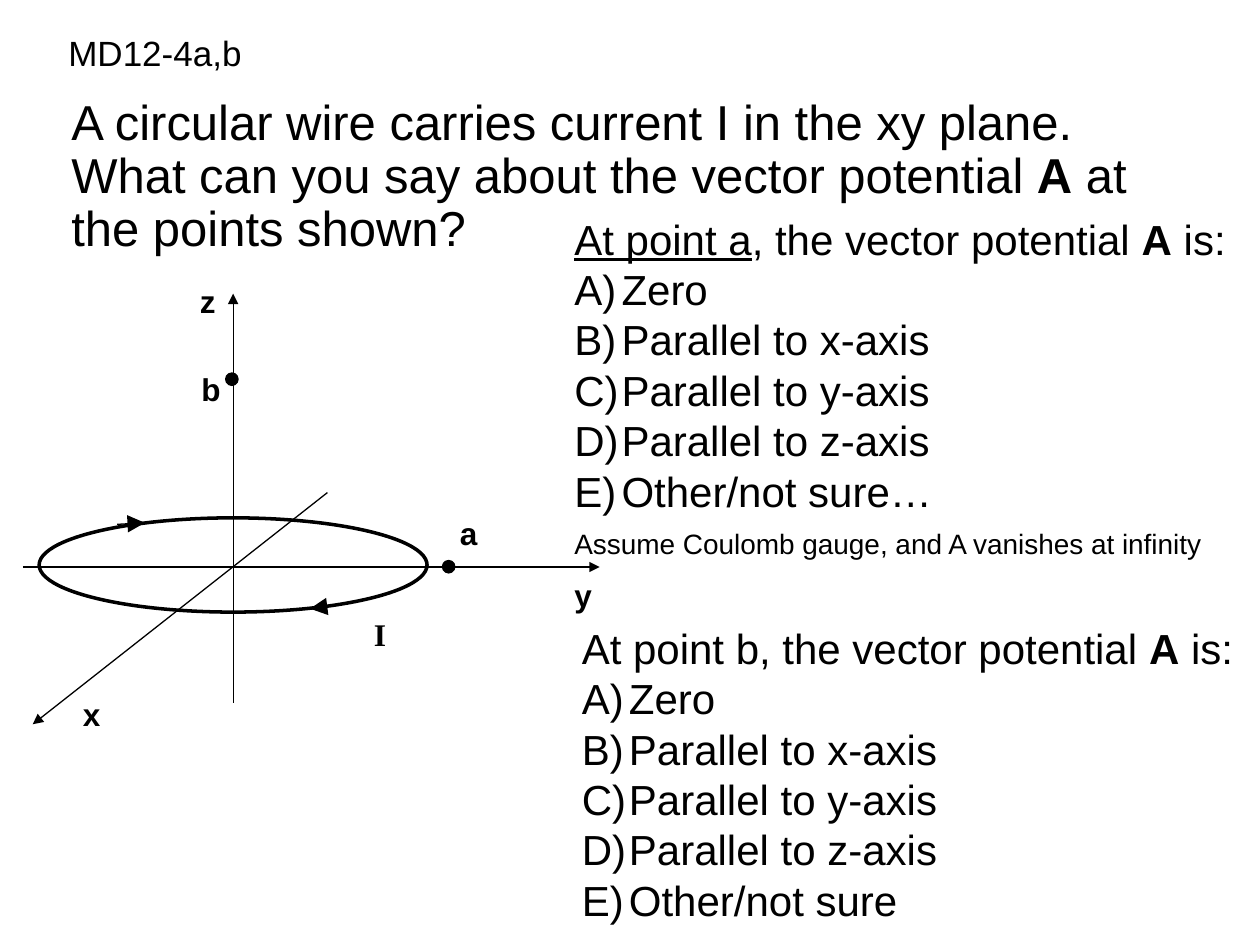
from lxml import etree
from pptx import Presentation
from pptx import util as u
from pptx.dml.color import RGBColor
from pptx.enum import shapes, text
from pptx.oxml import ns

BLACK = RGBColor(0x00, 0x00, 0x00)
HANG = u.Cm(0.95)
DIRECTIONS = ["Zero", "Parallel to x-axis", "Parallel to y-axis", "Parallel to z-axis"]


def add_runs(paragraph, runs, size, font="Arial"):
    """Append (words, style) runs; style holds any of 'b' and 'u'."""
    for words, style in runs:
        run = paragraph.add_run()
        run.text = words
        run.font.name = font
        run.font.size = u.Pt(size)
        run.font.color.rgb = BLACK
        run.font.bold = "b" in style
        run.font.underline = "u" in style


def add_text(parent, box, runs, size, font="Arial", wrap=True):
    """Add a text box with one paragraph and return its frame."""
    frame = parent.add_textbox(*map(u.Cm, box)).text_frame
    frame.word_wrap = wrap
    add_runs(frame.paragraphs[0], runs, size, font)
    return frame


def hang(paragraph, numbered):
    """Give a paragraph a hanging indent, with letters if numbered."""
    properties = paragraph._p.get_or_add_pPr()
    properties.set("marL", str(HANG))
    properties.set("indent", str(-HANG))
    if numbered:
        bullet = etree.SubElement(properties, ns.qn("a:buAutoNum"))
        bullet.set("type", "alphaUcParenR")


def add_choices(parent, box, heading, answers):
    """Add a heading followed by lettered answers."""
    frame = add_text(parent, box, heading, 24)
    hang(frame.paragraphs[0], False)
    for answer in answers:
        paragraph = frame.add_paragraph()
        hang(paragraph, True)
        add_runs(paragraph, [(answer, "")], 24)


def add_arrow(parent, start, end, head="med"):
    """Add a thin straight arrow."""
    arrow = parent.add_connector(
        shapes.MSO_CONNECTOR.STRAIGHT, *map(u.Cm, start + end))
    arrow.line.color.rgb = BLACK
    arrow.line.width = u.Pt(0.75)
    tip = etree.SubElement(arrow.line._get_or_add_ln(), ns.qn("a:tailEnd"))
    for key, value in (("type", "triangle"), ("w", head), ("len", head)):
        tip.set(key, value)
    etree.SubElement(arrow._element.spPr, ns.qn("a:effectLst"))


def add_ellipse(parent, box, line_width, filled):
    """Add a black ellipse, solid or outlined."""
    ellipse = parent.add_shape(shapes.MSO_SHAPE.OVAL, *map(u.Cm, box))
    ellipse.shadow.inherit = False
    ellipse.line.color.rgb = BLACK
    ellipse.line.width = u.Pt(line_width)
    if filled:
        ellipse.fill.solid()
        ellipse.fill.fore_color.rgb = BLACK
    else:
        ellipse.fill.background()


def add_diagram(parent):
    """Draw the axes, the current loop and the two points."""
    axes = [((4.7, 14.17), (4.7, 5.92)),
            ((0.46, 11.43), (12.09, 11.43)),
            ((6.6, 9.93), (0.66, 14.6))]
    for start, end in axes:
        add_arrow(parent, start, end)

    add_ellipse(parent, (0.79, 10.44, 7.82, 1.9), 2, False)
    current = [((6.88, 12.19), (6.25, 12.27)), ((2.36, 10.57), (2.92, 10.54))]
    for start, end in current:
        add_arrow(parent, start, end, "lg")

    for left, top in ((8.92, 11.3), (4.55, 7.52)):
        add_ellipse(parent, (left, top, 0.25, 0.25), 0.75, True)

    labels = [("x", 1.42, 13.89), ("y", 11.33, 11.48), ("z", 3.78, 5.56),
              ("a", 9.02, 10.24), ("b", 3.81, 7.34)]
    for name, left, top in labels:
        add_text(parent, (left, top, 0.86, 1.02), [(name, "b")], 18, wrap=False)


def main():
    """Build the slide."""
    deck = Presentation()
    deck.slide_width, deck.slide_height = u.Cm(25.4), u.Cm(19.05)
    canvas = deck.slides.add_slide(deck.slide_layouts[6]).shapes

    question = add_text(canvas, (1.19, 1.85, 22.86, 3.81), [
        ("A circular wire carries current I in the xy plane. "
         "What can you say about the vector potential ", ""),
        ("A", "b"), (" at the points shown?", "")], 28)
    question.paragraphs[0].line_spacing = 0.9
    question.paragraphs[0].space_before = u.Pt(5.6)

    add_diagram(canvas.add_group_shape().shapes)
    add_text(canvas, (7.29, 12.27, 0.76, 1.02), [("I", "b")], 18,
             "Times New Roman", wrap=False)

    ending = [("A", "b"), (" is:", "")]
    add_choices(canvas, (11.48, 12.42, 13.64, 6.4),
                [("At point b, the vector potential ", "")] + ending,
                DIRECTIONS + ["Other/not sure"])
    add_choices(canvas, (11.33, 4.17, 14.07, 6.4),
                [("At point a", "u"), (", the vector potential ", "")] + ending,
                DIRECTIONS + ["Other/not sure…"])

    number = add_text(canvas, (0.84, 0.64, 4.57, 0.84), [("MD12-4a,b", "")], 20)
    number.margin_left = number.margin_right = 0
    number.margin_top = number.margin_bottom = 0
    number.paragraphs[0].alignment = text.PP_ALIGN.CENTER

    add_text(canvas, (11.33, 10.49, 13.31, 0.94),
             [("Assume Coulomb gauge, and A vanishes at infinity", "")], 16,
             wrap=False)

    deck.save("out.pptx")


main()
